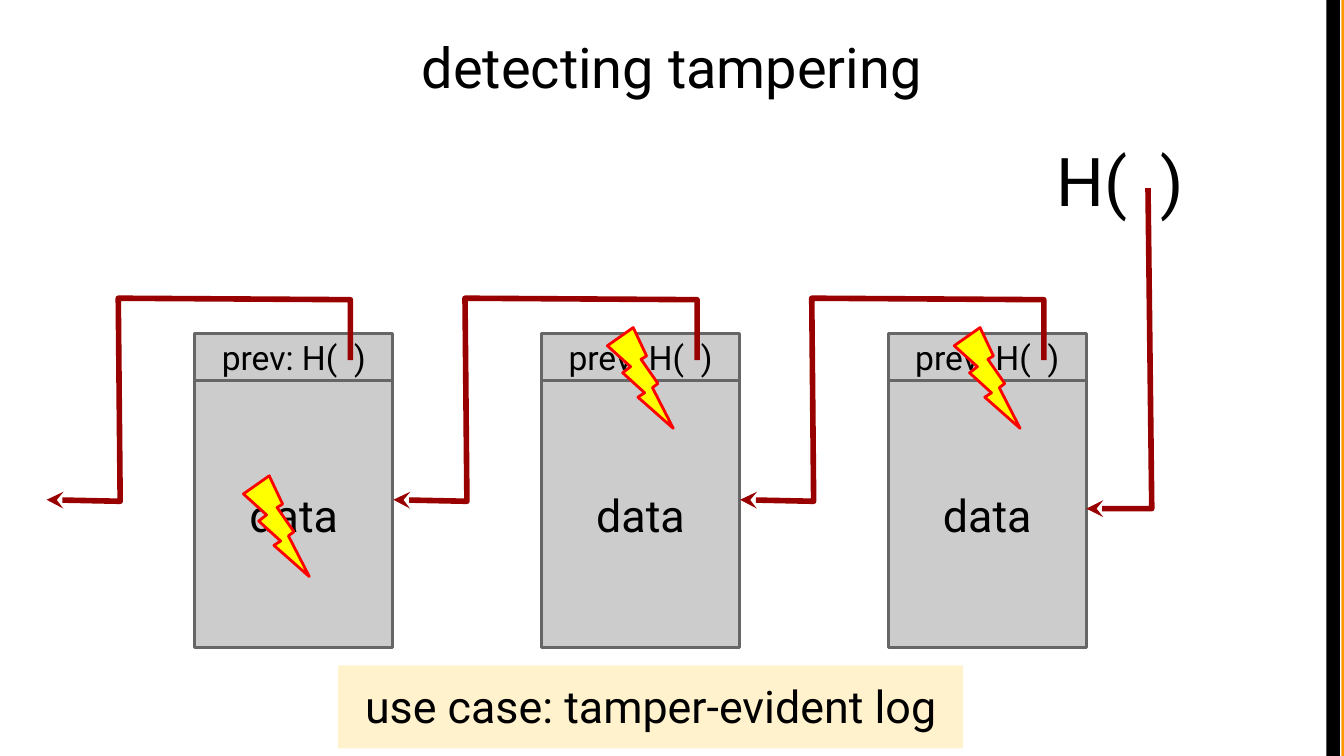
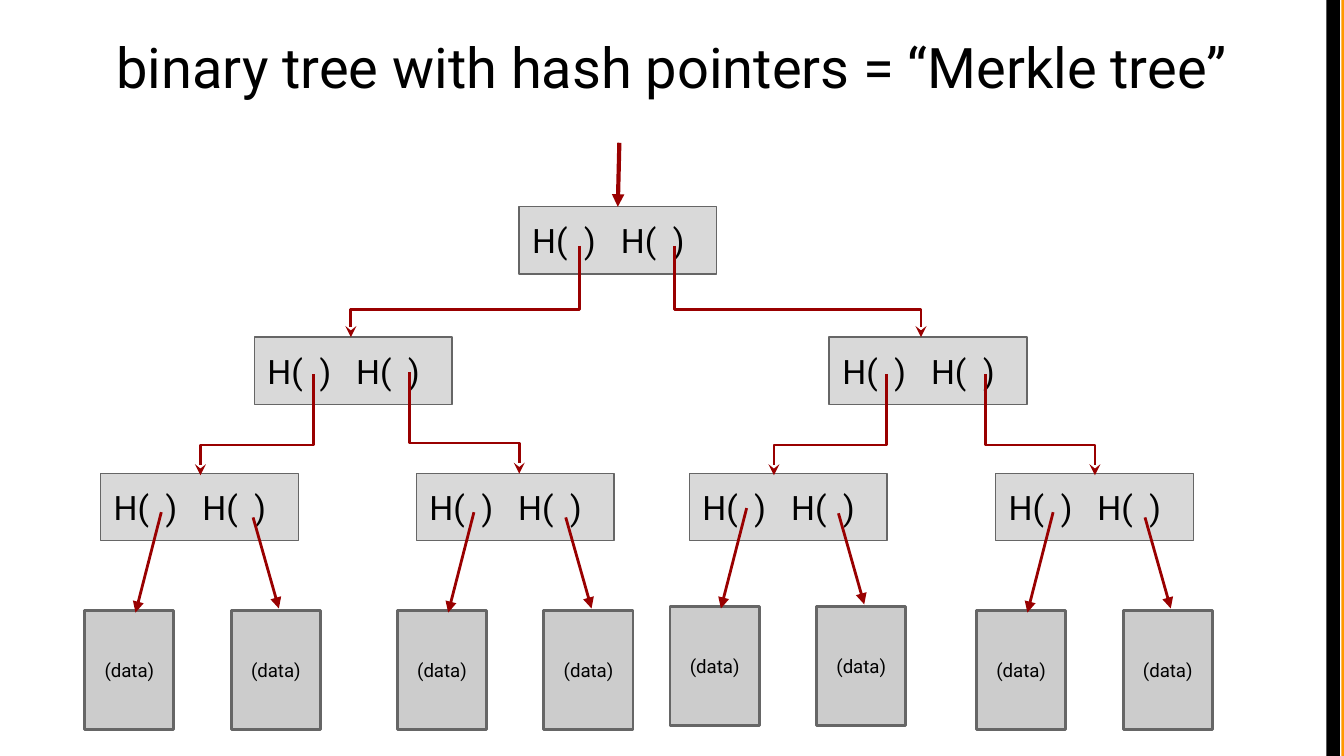
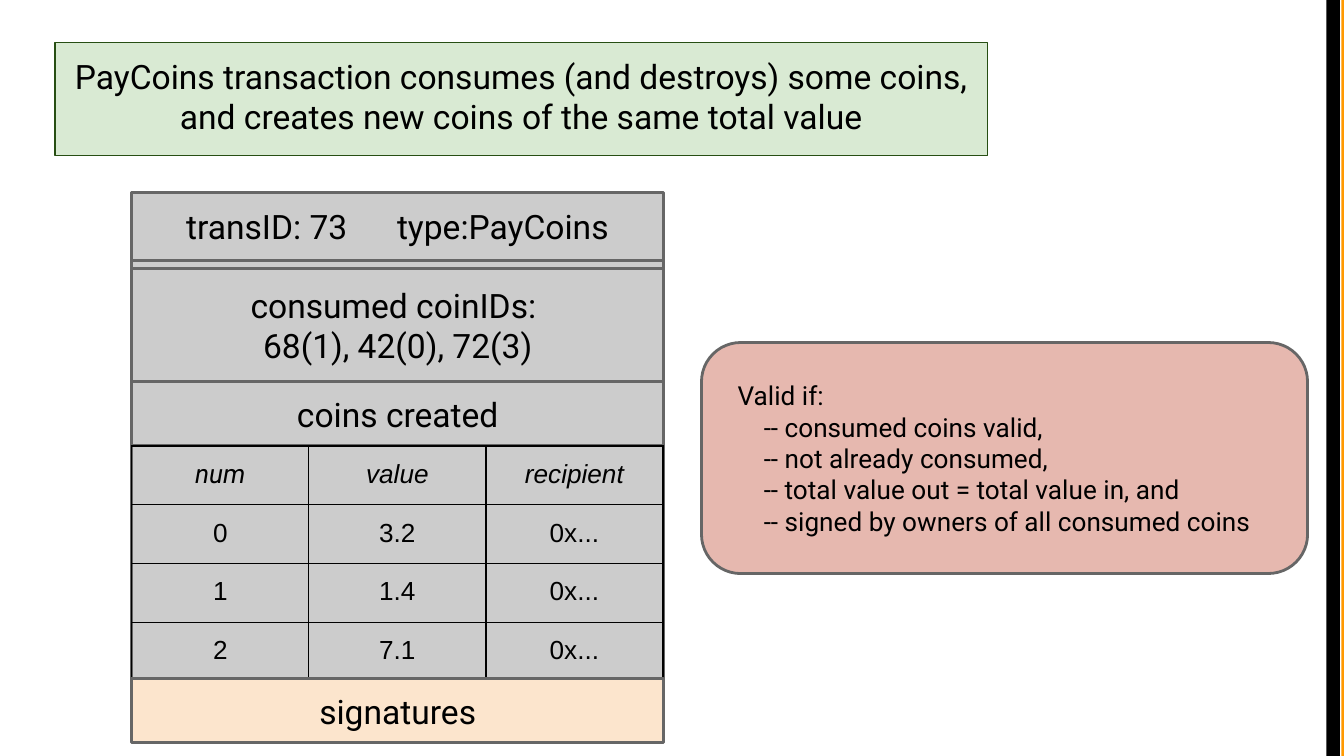
import pptx
import pptx.dml.color
import pptx.enum.shapes
import pptx.enum.text
import pptx.oxml.ns
import pptx.util
from lxml import etree

Pt = pptx.util.Pt
RGBColor = pptx.dml.color.RGBColor
SHAPE = pptx.enum.shapes.MSO_SHAPE
ALIGN = pptx.enum.text.PP_ALIGN
ANCHOR = pptx.enum.text.MSO_ANCHOR
qn = pptx.oxml.ns.qn

BLACK = RGBColor(0x00, 0x00, 0x00)
ORANGE = RGBColor(0xFF, 0x99, 0x00)
GREY = RGBColor(0xCC, 0xCC, 0xCC)
PALE_GREY = RGBColor(0xD9, 0xD9, 0xD9)
EDGE = RGBColor(0x66, 0x66, 0x66)
DARK_RED = RGBColor(0x99, 0x00, 0x00)
RED = RGBColor(0xFF, 0x00, 0x00)
YELLOW = RGBColor(0xFF, 0xFF, 0x00)
CREAM = RGBColor(0xFF, 0xF2, 0xCC)
PEACH = RGBColor(0xFC, 0xE5, 0xCD)
PINK = RGBColor(0xE6, 0xB8, 0xAF)
PALE_GREEN = RGBColor(0xD9, 0xEA, 0xD3)
DARK_GREEN = RGBColor(0x27, 0x4E, 0x13)

FONT = "Roboto"
TABLE_FONT = "Arial"
INSET = 7.2
WIDTH, HEIGHT = 720, 405
TITLE_ONLY, BLANK = 5, 6


def points(*lengths):
    return [Pt(length) for length in lengths]


def apply(target, values):
    for name, value in values.items():
        setattr(target, name, value)


class Deck:
    """The shared style and the slide being drawn."""

    def __init__(self):
        self.prs = pptx.Presentation()
        apply(self.prs, {"slide_width": Pt(WIDTH), "slide_height": Pt(HEIGHT)})
        self.slide = None

    def start(self, title=None):
        layout = self.prs.slide_layouts[BLANK if title is None else TITLE_ONLY]
        self.slide = self.prs.slides.add_slide(layout)
        if len(self.prs.slides) == 1:
            self.edge_bands()
        if title is not None:
            heading = self.slide.shapes.title
            apply(heading, dict(zip(("left", "top", "width", "height"),
                                    points(36, 10, 648, 54))))
            self.set_text(heading.text_frame, [title], 30, space_before=6)

    def edge_bands(self):
        """Move the bands at the right edge to the master, for every slide."""
        master_shapes = self.prs.slide_master.shapes.element
        for number, (left, width, color) in enumerate(
                [(718.6, 1.4, ORANGE), (710.6, 7.2, BLACK)], start=100):
            band = self.box((left, 0, width, HEIGHT), color)
            band.element.nvSpPr.cNvPr.id = number
            master_shapes.append(band.element)

    def set_text(self, frame, lines, size, align=ALIGN.CENTER, anchor=ANCHOR.TOP,
                 space_before=0, left_inset=INSET, tab=None, indent=0):
        """Fill a frame; tab is a stop, indent moves all lines but the first."""
        apply(frame, {"word_wrap": True, "vertical_anchor": anchor,
                      "auto_size": pptx.enum.text.MSO_AUTO_SIZE.NONE,
                      "margin_left": Pt(left_inset), "margin_right": Pt(INSET),
                      "margin_top": Pt(INSET), "margin_bottom": Pt(INSET)})
        for index, line in enumerate(lines):
            paragraph = frame.add_paragraph() if index else frame.paragraphs[0]
            self.set_line(paragraph, line, size, align)
            paragraph.space_before = Pt(space_before)
            properties = paragraph._p.get_or_add_pPr()
            if index and indent:
                properties.set("marL", str(Pt(indent)))
            if tab:
                stops = etree.SubElement(properties, qn("a:tabLst"))
                etree.SubElement(stops, qn("a:tab"), pos=str(Pt(tab)), algn="l")

    def set_line(self, paragraph, line, size, align, font=FONT, italic=False):
        paragraph.alignment = align
        run = paragraph.add_run()
        run.text = line
        apply(run.font, {"name": font, "size": Pt(size), "italic": italic})
        run.font.color.rgb = BLACK

    def box(self, place, fill, edge=None, weight=1.5, kind=SHAPE.RECTANGLE,
            lines=(), size=18, **text_style):
        shape = self.slide.shapes.add_shape(kind, *points(*place))
        shape.shadow.inherit = False
        shape.fill.solid()
        shape.fill.fore_color.rgb = fill
        if edge is None:
            shape.line.fill.background()
        else:
            self.stroke(shape, edge, weight)
        if lines:
            self.set_text(shape.text_frame, lines, size, **text_style)
        return shape

    def label(self, place, text, size):
        frame = self.slide.shapes.add_textbox(*points(*place)).text_frame
        self.set_text(frame, [text], size, align=ALIGN.LEFT)

    def stroke(self, shape, color, weight, arrowhead=None):
        shape.line.color.rgb = color
        shape.line.width = Pt(weight)
        if arrowhead:
            etree.SubElement(shape.line._get_or_add_ln(), qn("a:tailEnd"),
                             type=arrowhead)

    def bent_arrow(self, corners, weight):
        start, *others = [points(*corner) for corner in corners]
        builder = self.slide.shapes.build_freeform(*start)
        builder.add_line_segments(others, close=False)
        arrow = builder.convert_to_shape()
        arrow.shadow.inherit = False
        arrow.fill.background()
        self.stroke(arrow, DARK_RED, weight, "stealth")

    def straight_arrow(self, start, end, weight=1.5):
        arrow = self.slide.shapes.add_connector(
            pptx.enum.shapes.MSO_CONNECTOR.STRAIGHT, *points(*start, *end))
        self.stroke(arrow, DARK_RED, weight, "triangle")
        etree.SubElement(arrow.element.spPr, qn("a:effectLst"))
        return arrow

    def grid(self, place, rows):
        """A see-through table with thin black borders and an italic head."""
        table = self.slide.shapes.add_table(
            len(rows), len(rows[0]), *points(*place)).table
        apply(table, {"first_row": False, "horz_banding": False})
        for r, row in enumerate(rows):
            for c, value in enumerate(row):
                cell = table.cell(r, c)
                apply(cell, {"margin_" + side: Pt(INSET)
                             for side in ("left", "right", "top", "bottom")})
                self.set_line(cell.text_frame.paragraphs[0], value, 14,
                              ALIGN.CENTER, FONT if r == c == 0 else TABLE_FONT,
                              italic=r == 0)
                self.cell_borders(cell)
                cell.fill.background()

    def cell_borders(self, cell):
        properties = cell._tc.get_or_add_tcPr()
        for side in ("a:lnL", "a:lnR", "a:lnT", "a:lnB"):
            border = etree.SubElement(properties, qn(side), w=str(Pt(0.75)))
            fill = etree.SubElement(border, qn("a:solidFill"))
            etree.SubElement(fill, qn("a:srgbClr"), val=str(BLACK))


def tampering_slide(deck):
    deck.start("detecting tampering")
    pointer = [(83.3, 193), (83.3, 160.6), (-41, 159.8), (-40, 268.6), (-79.4, 267.8)]
    for block in range(3):
        left = 104.4 + 185.75 * block
        for top, height, text, size in [(203.8, 143.3, "data", 24),
                                        (178.6, 25.2, "prev: H(  )", 18)]:
            deck.box((left, top, 106, height), GREY, EDGE, lines=[text],
                     size=size, anchor=ANCHOR.MIDDLE)
        deck.bent_arrow([(left + x, y) for x, y in pointer], 3)
    deck.label((558.7, 67.7, 111.6, 36), "H(  )", 36)
    deck.bent_arrow([(615, 100.8), (617, 272.5), (582, 272.5)], 3)
    deck.box((181.2, 356.4, 334.8, 44.6), CREAM, size=24, space_before=6,
             lines=["use case: tamper-evident log"])
    for left, top in [(130.4, 254.9), (325.4, 175.5), (511.2, 175.5)]:
        deck.box((left, top, 35.3, 54), YELLOW, RED, kind=SHAPE.LIGHTNING_BOLT)


def merkle_slide(deck):
    deck.start("binary tree with hash pointers = “Merkle tree”")

    def hash_node(left, top):
        return deck.box((left, top, 106, 36), PALE_GREY, EDGE, 0.75,
                        lines=["H(  )\tH(  )"], align=ALIGN.LEFT, tab=47.5)

    root = hash_node(278, 110.8)
    for left in (136.2, 444.2):
        hash_node(left, 180.6)
    for left in (53.8, 223, 369.2, 533.3):
        hash_node(left, 253.6)

    for (x, y), turn, (end_x, end_y) in [
            ((310.5, 131.8), 165.8, (188, 180.6)),
            ((361.4, 131.8), 165.8, (493.4, 180.6)),
            ((167.9, 200.6), 238.4, (107.4, 254.6)),
            ((219.3, 199.6), 237.4, (278.2, 253.8)),
            ((475, 200.6), 238.4, (414.6, 254.6)),
            ((527.8, 200.6), 238.4, (586.6, 254.6))]:
        deck.bent_arrow([(x, y), (x, turn), (end_x, turn), (end_x, end_y)], 1.5)

    data_pairs = [(45.4, 327), (212.9, 327), (359, 324.8), (523.2, 327)]
    for left, top in data_pairs:
        for offset, start, end in [(0, (41, -52.6), (27.2, 1.2)),
                                   (78.5, (90.2, -49.8), (104, -1))]:
            deck.box((left + offset, top, 47.8, 64), GREY, EDGE, size=10,
                     lines=["(data)"], anchor=ANCHOR.MIDDLE)
            deck.straight_arrow((left + start[0], top + start[1]),
                                (left + end[0], top + end[1]))
    entry = deck.straight_arrow((331.8, 76.5), (331, 110.8), 2.25)
    entry.end_connect(root, 0)


def transaction_slide(deck):
    deck.start()
    left, width = 70.6, 285

    def band(top, height, lines, fill=GREY, **style):
        deck.box((left, top, width, height), fill, EDGE, lines=lines,
                 anchor=ANCHOR.MIDDLE, **style)

    band(139.7, 223.9, [])
    band(103, 36.4, ["transID: 73\ttype:PayCoins"], align=ALIGN.LEFT,
         left_inset=29.1, tab=113)
    deck.box((29.5, 22.8, 499.7, 60.7), PALE_GREEN, DARK_GREEN, 0.75,
             lines=["PayCoins transaction consumes (and destroys) some coins,",
                    "and creates new coins of the same total value"])
    band(204.5, 34.4, ["coins created"])
    deck.grid((left, 239, 284.6, 126),
              [("num", "value", "recipient"), ("0", "3.2", "0x..."),
               ("1", "1.4", "0x..."), ("2", "7.1", "0x...")])
    band(143.8, 60.7, ["consumed coinIDs: ", "68(1), 42(0), 72(3)"])
    band(363.6, 34.4, ["signatures"], fill=PEACH)
    rules = deck.box((375.8, 183.5, 324.7, 123.8), PINK, EDGE,
                     kind=SHAPE.ROUNDED_RECTANGLE, size=14, align=ALIGN.LEFT,
                     anchor=ANCHOR.MIDDLE, indent=14, left_inset=13.2,
                     lines=["Valid if:", "-- consumed coins valid,",
                            "-- not already consumed,",
                            "-- total value out = total value in, and",
                            "-- signed by owners of all consumed coins"])
    rules.adjustments[0] = 0.17


def main():
    deck = Deck()
    tampering_slide(deck)
    merkle_slide(deck)
    transaction_slide(deck)
    deck.prs.save("out.pptx")


if __name__ == "__main__":
    main()
